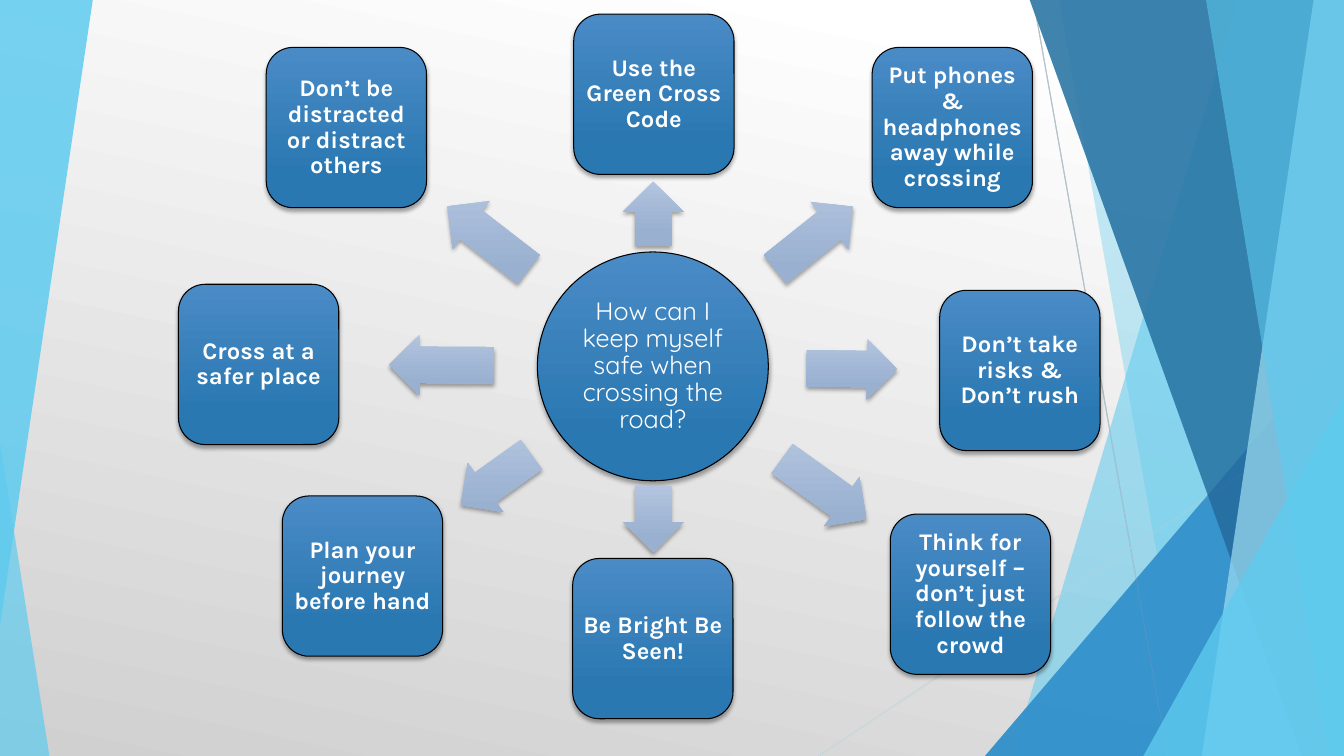
from lxml.etree import SubElement
from pptx import Presentation
from pptx.dml.color import RGBColor
from pptx.enum.shapes import MSO_CONNECTOR, MSO_SHAPE
from pptx.enum.text import MSO_ANCHOR, PP_ALIGN
from pptx.oxml.ns import qn
from pptx.util import Pt

PX = 9144  # 100 px to the inch
WIDTH, HEIGHT = 1333, 750

COLORS = {
    "white": "FFFFFF", "black": "000000", "mist": "D0D0D0",
    "grey": "BFBFBF", "pale grey": "D9D9D9",
    "sky": "5FCBEF", "pale sky": "9FE0F5", "cyan": "17B0E4",
    "blue": "2E83C3", "navy": "226292",
    "node top": "4A8BC6", "node base": "2A78B2",
    "arrow top": "B2C4DF", "arrow base": "99B0D0",
}

# Facet shards: x at the top, x at the bottom; each runs to the right edge
SHARDS = {
    "wide": (1228, 1004), "sliver": (1050, 1183), "main": (1021, 1291),
    "edge": (1303, 1192), "inner": (1196, 1318),
}
LOW_TRIANGLE = (977, 333, 356, 417)
CORNER_TRIANGLE = (1134, 393, 199, 357)

# Per layer: line colours and opacity, then (facet, colour, opacity) back to front
FACET_LAYERS = [
    (("sky", "sky"), 70, [
        ("wide", "sky", 36), ("sliver", "sky", 20), (LOW_TRIANGLE, "cyan", 66),
        ("main", "cyan", 50), ("edge", "blue", 70), ("inner", "navy", 80),
        (CORNER_TRIANGLE, "cyan", 66)]),
    (("grey", "pale grey"), 100, [
        ("wide", "sky", 30), ("sliver", "sky", 20), (LOW_TRIANGLE, "blue", 72),
        ("main", "navy", 70), ("edge", "pale sky", 70), ("inner", "sky", 65),
        (CORNER_TRIANGLE, "sky", 80)]),
]

ALTERNATE = MSO_SHAPE.FLOWCHART_ALTERNATE_PROCESS
ROUNDED = MSO_SHAPE.ROUNDED_RECTANGLE
NODE_SIZE, ARROW_HEIGHT = 159, 60

# Text, node shape, node left and top, arrow left, top, length and rotation
SPOKES = [
    ("Use the Green Cross Code", ALTERNATE, 569, 14, 616, 182, 64, 270),
    ("Put phones & headphones away while crossing", ALTERNATE,
     865, 47, 758, 206, 99, 321.3),
    ("Don’t take risks & Don’t rush", ALTERNATE, 932, 288, 800, 336, 90, 0.7),
    ("Think for yourself – don’t just follow the crowd", ALTERNATE,
     883, 510, 766, 455, 103, 35.7),
    ("Be Bright Be Seen!", ALTERNATE, 568, 554, 615, 485, 66, 90),
    ("Plan your journey before hand", ROUNDED, 280, 492, 449, 446, 86, 144.3),
    ("Cross at a safer place", ROUNDED, 177, 282, 386, 332, 104, 180.3),
    ("Don’t be distracted or distract others", ALTERNATE,
     264, 47, 433, 206, 102, 217.8),
]

HUB_FONT = {"name": "Quicksand", "size": Pt(18), "bold": False}
NODE_FONT = {"name": "Karla", "size": Pt(17), "bold": True}


def rgb(color):
    return RGBColor.from_string(COLORS[color])


def set_values(target, values):
    for name, value in values.items():
        setattr(target, name, value)


def set_opacity(element, percent):
    for color in element.iter(qn("a:srgbClr")):
        SubElement(color, qn("a:alpha"), val=str(percent * 1000))


def set_gradient(fill, stops, angle):
    fill.gradient()
    fill.gradient_angle = 360 - angle
    for stop, (position, color) in zip(fill.gradient_stops, stops):
        stop.position = position
        stop.color.rgb = rgb(color)


def add_preset(slide, kind, box):
    shape = slide.shapes.add_shape(kind, *(length * PX for length in box))
    shape.shadow.inherit = False
    shape.line.fill.background()
    return shape


def fill_facet(shape, color, opacity):
    shape.shadow.inherit = False
    shape.line.fill.background()
    shape.fill.solid()
    shape.fill.fore_color.rgb = rgb(color)
    set_opacity(shape._element.spPr, opacity)


def add_shard(slide, top_x, bottom_x, color, opacity):
    builder = slide.shapes.build_freeform(top_x, -1, scale=PX)
    builder.add_line_segments([(WIDTH, -1), (WIDTH, HEIGHT), (bottom_x, HEIGHT)])
    fill_facet(builder.convert_to_shape(), color, opacity)


def add_triangle(slide, box, color, opacity, apex=1, rotation=0):
    shape = add_preset(slide, MSO_SHAPE.ISOSCELES_TRIANGLE, box)
    shape.adjustments[0] = apex
    shape.rotation = rotation
    fill_facet(shape, color, opacity)


def add_hairline(slide, ends, color, opacity):
    connector = slide.shapes.add_connector(
        MSO_CONNECTOR.STRAIGHT, *(length * PX for length in ends))
    connector.line.width = Pt(0.75)
    connector.line.color.rgb = rgb(color)
    properties = connector._element.spPr
    set_opacity(properties, opacity)
    SubElement(properties, qn("a:effectLst"))


def add_raised(slide, kind, box, tone):
    shape = add_preset(slide, kind, box)
    set_gradient(shape.fill, [(0, f"{tone} top"), (0.78, f"{tone} base")], 90)
    properties = shape._element.spPr
    properties.find(qn("a:gradFill")).set("rotWithShape", "0")
    shadow = SubElement(properties.find(qn("a:effectLst")), qn("a:outerShdw"),
                        blurRad=str(Pt(3)), dist=str(Pt(2)), dir="5400000",
                        algn="ctr", rotWithShape="0")
    color = SubElement(shadow, qn("a:srgbClr"), val=COLORS["black"])
    SubElement(color, qn("a:alpha"), val="35000")
    return shape


def add_node(slide, kind, box, text, font, inset):
    shape = add_raised(slide, kind, box, "node")
    shape.line.color.rgb = rgb("black")
    shape.line.width = Pt(0.75)
    frame = shape.text_frame
    sides = ("left", "top", "right", "bottom")
    set_values(frame, {f"margin_{side}": inset * PX for side in sides})
    set_values(frame, {"word_wrap": True, "vertical_anchor": MSO_ANCHOR.MIDDLE})
    paragraph = frame.paragraphs[0]
    set_values(paragraph, {"alignment": PP_ALIGN.CENTER, "line_spacing": 0.9})
    run = paragraph.add_run()
    run.text = text
    set_values(run.font, font)
    run.font.color.rgb = rgb("white")


def add_arrow(slide, box, rotation):
    arrow = add_raised(slide, MSO_SHAPE.RIGHT_ARROW, box, "arrow")
    arrow.adjustments[0] = 0.6
    arrow.adjustments[1] = 0.5
    arrow.rotation = rotation


def add_facets(slide, line_colors, line_opacity, facets):
    line_ends = [(1025, 0, 1158, HEIGHT), (WIDTH, 403, 812, HEIGHT)]
    for ends, color in zip(line_ends, line_colors):
        add_hairline(slide, ends, color, line_opacity)
    for facet, color, opacity in facets:
        if facet in SHARDS:
            add_shard(slide, *SHARDS[facet], color, opacity)
        else:
            add_triangle(slide, facet, color, opacity)


def main():
    presentation = Presentation()
    presentation.slide_width = WIDTH * PX
    presentation.slide_height = HEIGHT * PX
    slide = presentation.slides.add_slide(presentation.slide_layouts[6])

    # Background and side facets
    set_gradient(slide.background.fill, [(0.1, "white"), (1, "mist")], 102)
    for layer in FACET_LAYERS:
        add_facets(slide, *layer)
    add_triangle(slide, (0, 439, 49, 311), "sky", 70, apex=0)
    add_triangle(slide, (0, 0, 92, 620), "sky", 85, rotation=180)

    # Central question
    add_node(slide, MSO_SHAPE.OVAL, (533, 250, 229, 227),
             "How can I keep myself safe when crossing the road?", HUB_FONT, 3)

    # Answers around it
    for text, kind, left, top, arrow_left, arrow_top, length, rotation in SPOKES:
        add_arrow(slide, (arrow_left, arrow_top, length, ARROW_HEIGHT), rotation)
        add_node(slide, kind, (left, top, NODE_SIZE, NODE_SIZE), text, NODE_FONT, 2)

    presentation.save("out.pptx")


if __name__ == "__main__":
    main()
